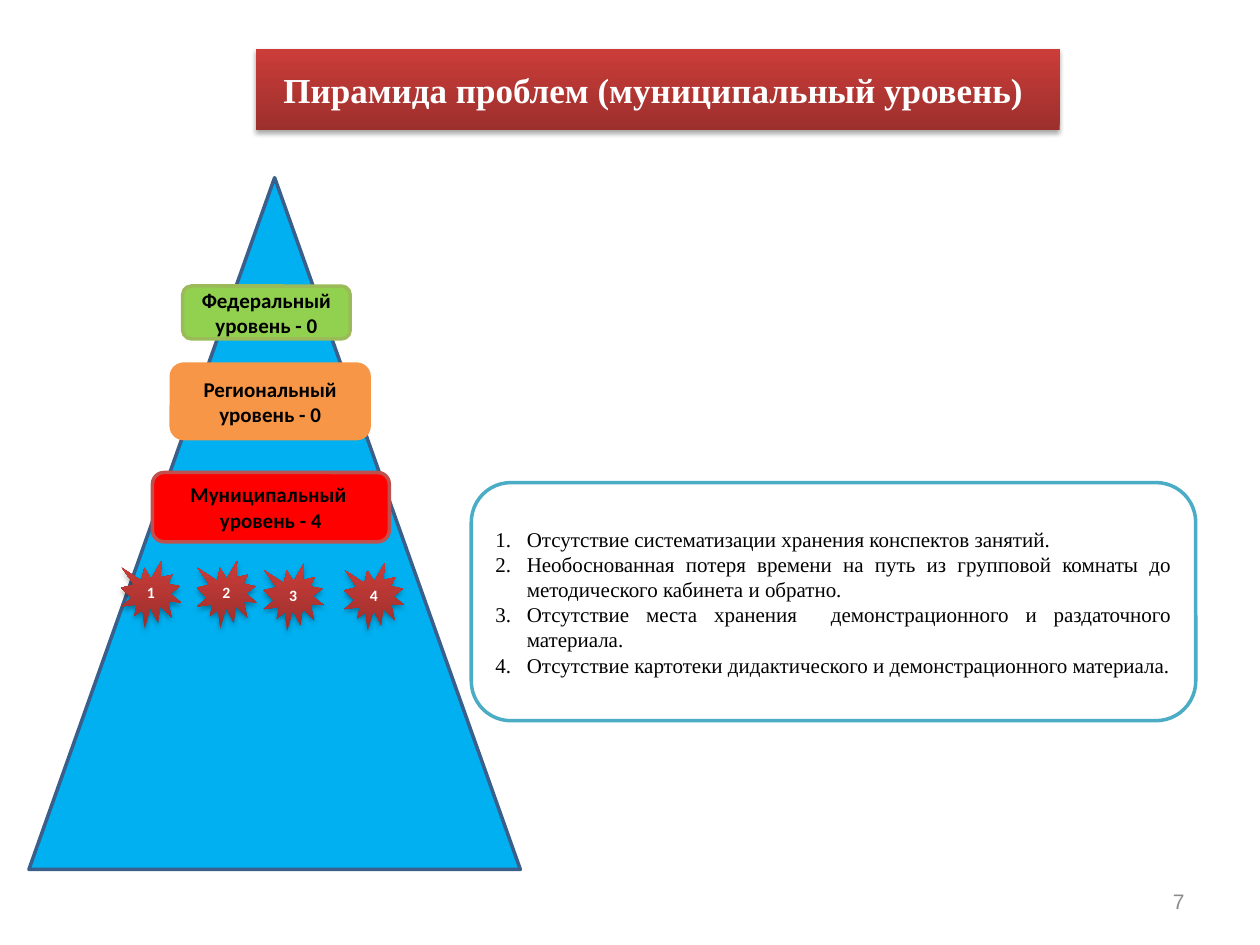
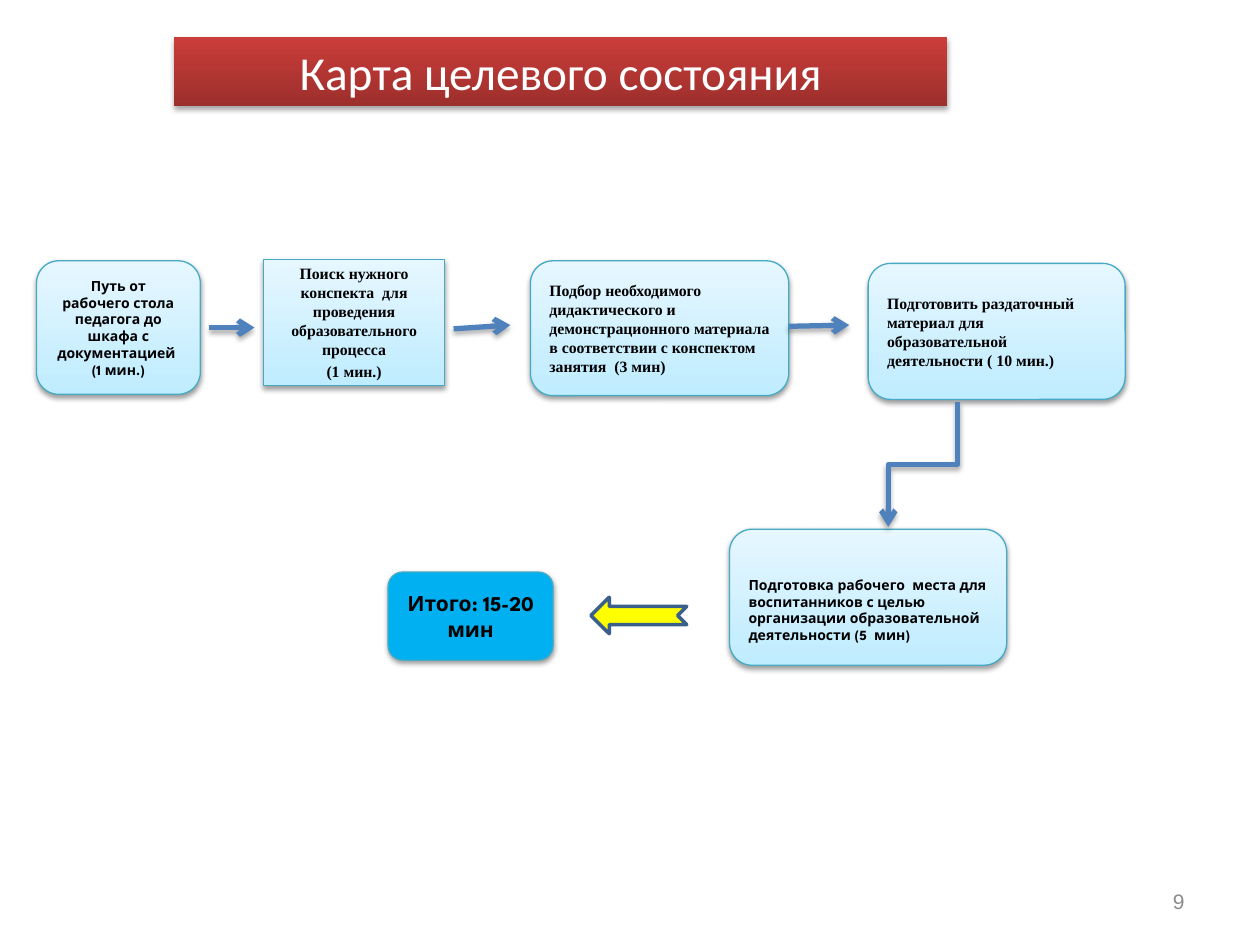
from dataclasses import dataclass
from typing import NamedTuple, Optional, Union

from lxml import etree
from pptx import Presentation
from pptx.dml.color import RGBColor
from pptx.enum.shapes import MSO_CONNECTOR as LINK, MSO_SHAPE as SHAPE
from pptx.enum.text import MSO_ANCHOR, PP_ALIGN as ALIGN
from pptx.oxml.ns import qn
from pptx.util import Inches, Pt


class Gradient(NamedTuple):
    bottom: str
    top: str


class Shadow(NamedTuple):
    opacity: int
    blur: float
    distance: float


class Font(NamedTuple):
    name: str
    size: float
    color: str = "000000"
    bold: bool = True


class Place(NamedTuple):
    x: float
    y: float
    w: float
    h: float


class Outline(NamedTuple):
    color: str
    width: float


@dataclass(frozen=True)
class Theme:
    red: Gradient = Gradient("9C2F2C", "CB3D39")
    ice: Gradient = Gradient("BFECFF", "E6F7FF")
    sky: str = "00B0F0"
    white: str = "FFFFFF"
    yellow: str = "FFFF00"
    navy_edge: Outline = Outline("3A5F8B", 2)
    teal_edge: Outline = Outline("4BACC6", 2)
    step_edge: Outline = Outline("46AAC4", 0.75)
    arrow: Outline = Outline("4F81BD", 3)
    strong_shadow: Shadow = Shadow(35, 3.1, 1.8)
    step_shadow: Shadow = Shadow(38, 3.1, 1.6)
    title_serif: Font = Font("Times New Roman", 20, "FFFFFF")
    title_sans: Font = Font("Calibri", 27, "FFFFFF", False)
    level: Font = Font("Calibri", 12)
    burst: Font = Font("Calibri", 9, "FFFFFF")
    problem: Font = Font("Times New Roman", 12, bold=False)
    step_serif: Font = Font("Times New Roman", 9)
    step_sans: Font = Font("League Spartan", 8)
    total: Font = Font("League Spartan", 12)
    page: Font = Font("Arial", 12, "8B8B8B", False)


T = Theme()


@dataclass(frozen=True)
class Box:
    at: Place
    lines: tuple[str, ...] = ()
    font: Font = T.level
    fill: Union[str, Gradient] = T.white
    edge: Optional[Outline] = None
    shadow: Optional[Shadow] = None
    kind: SHAPE = SHAPE.ROUNDED_RECTANGLE
    align: ALIGN = ALIGN.CENTER
    top_inset: float = 0.05
    space_before: float = 0
    numbered: bool = False
    rotation: int = 0


@dataclass(frozen=True)
class Step(Box):
    font: Font = T.step_serif
    fill: Union[str, Gradient] = T.ice
    edge: Optional[Outline] = T.step_edge
    shadow: Optional[Shadow] = T.step_shadow


LEVELS = (
    Box(Place(1.45, 2.27, 1.33, 0.42), ("Федеральный уровень - 0",),
        fill="92D050", edge=Outline("9BBB59", 2)),
    Box(Place(1.36, 2.89, 1.57, 0.59), ("Региональный уровень - 0",),
        fill="F79646", edge=Outline("F79646", 2)),
    Box(Place(1.21, 3.75, 1.88, 0.55), ("Муниципальный  уровень - 4",),
        fill="FF0000", edge=Outline("C0504D", 2)),
)

BURSTS = ((0.96, 4.45), (1.56, 4.45), (2.09, 4.47), (2.73, 4.47))

PROBLEMS = (
    "Отсутствие систематизации хранения конспектов занятий. ",
    "Необоснованная потеря времени на путь из групповой комнаты до "
    "методического кабинета и обратно.",
    "Отсутствие места хранения  демонстрационного и раздаточного материала.",
    "Отсутствие картотеки дидактического и демонстрационного материала.",
)

STEPS = (
    Step(Place(0.29, 2.07, 1.3, 1.06),
         ("Путь от рабочего стола педагога до шкафа с документацией ", "(1 мин.)"),
         font=T.step_sans),
    Step(Place(2.09, 2.06, 1.44, 1),
         ("Поиск нужного конспекта  для проведения образовательного процесса",
          "(1 мин.)"),
         kind=SHAPE.RECTANGLE, space_before=1.8),
    Step(Place(4.21, 2.07, 2.05, 1.07),
         ("Подбор необходимого дидактического и демонстрационного материала "
          "в соответствии с конспектом занятия  (3 мин)",),
         align=ALIGN.LEFT),
    Step(Place(6.89, 2.09, 2.04, 1.08),
         ("Подготовить раздаточный материал для образовательной деятельности "
          "( 10 мин.)",),
         align=ALIGN.LEFT),
    Step(Place(5.79, 4.2, 2.2, 1.08),
         ("Подготовка рабочего  места для воспитанников с целью организации "
          "образовательной деятельности (5  мин)",),
         font=T.step_sans, align=ALIGN.LEFT, top_inset=0.25),
    Step(Place(3.08, 4.54, 1.31, 0.7), ("Итого: 15-20 мин",),
         font=T.total, fill=T.sky),
)

STEP_ARROWS = ((1.66, 2.6, 2.02, 2.6), (3.6, 2.61, 4.05, 2.58), (6.26, 2.59, 6.74, 2.58))


def set_shadow(sp, shadow: Optional[Shadow]) -> None:
    """Replace the theme effects; call after the line is set."""
    props = sp._element.spPr
    effects = props.find(qn("a:effectLst"))
    if effects is None:
        effects = etree.SubElement(props, qn("a:effectLst"))
    if shadow:
        outer = etree.SubElement(
            effects, qn("a:outerShdw"), blurRad=str(Pt(shadow.blur)),
            dist=str(Pt(shadow.distance)), dir="5400000", rotWithShape="0")
        color = etree.SubElement(outer, qn("a:srgbClr"), val="000000")
        etree.SubElement(color, qn("a:alpha"), val=str(shadow.opacity * 1000))


def set_fill(sp, fill: Union[str, Gradient]) -> None:
    if isinstance(fill, Gradient):
        sp.fill.gradient()
        sp.fill.gradient_angle = 90
        for stop, color in zip(sp.fill.gradient_stops, fill):
            stop.color.rgb = RGBColor.from_string(color)
    else:
        sp.fill.solid()
        sp.fill.fore_color.rgb = RGBColor.from_string(fill)


def set_line(sp, edge: Optional[Outline]) -> None:
    if edge is None:
        sp.line.fill.background()
    else:
        sp.line.color.rgb = RGBColor.from_string(edge.color)
        sp.line.width = Pt(edge.width)


def number_paragraph(p) -> None:
    props = p._p.get_or_add_pPr()
    indent = Inches(0.25)
    props.set("marL", str(indent))
    props.set("indent", str(-indent))
    etree.SubElement(props, qn("a:buFont"), typeface="+mj-lt")
    etree.SubElement(props, qn("a:buAutoNum"), type="arabicPeriod")


def write(tf, lines: tuple[str, ...], font: Font, align: ALIGN,
          space_before: float = 0, numbered: bool = False) -> None:
    tf.word_wrap = True
    tf.vertical_anchor = MSO_ANCHOR.MIDDLE
    for i, line in enumerate(lines):
        p = tf.add_paragraph() if i else tf.paragraphs[0]
        p.alignment = align
        if i and space_before:
            p.space_before = Pt(space_before)
        if numbered:
            number_paragraph(p)
        r = p.add_run()
        r.text = line
        r.font.name = font.name
        r.font.size = Pt(font.size)
        r.font.bold = font.bold
        r.font.color.rgb = RGBColor.from_string(font.color)


def draw_box(s, box: Box) -> None:
    sp = s.shapes.add_shape(box.kind, *map(Inches, box.at))
    sp.rotation = box.rotation
    set_fill(sp, box.fill)
    set_line(sp, box.edge)
    sp.shadow.inherit = False
    set_shadow(sp, box.shadow)
    if box.lines:
        tf = sp.text_frame
        tf.margin_top = Inches(box.top_inset)
        write(tf, box.lines, box.font, box.align, box.space_before, box.numbered)


def draw_arrow(s, kind: LINK, ends: tuple[float, ...], quarter_turns: int = 0) -> None:
    c = s.shapes.add_connector(kind, *map(Inches, ends))
    set_line(c, T.arrow)
    props = c._element.spPr
    etree.SubElement(props.find(qn("a:ln")), qn("a:tailEnd"), type="arrow")
    if quarter_turns:
        props.find(qn("a:xfrm")).set("rot", str(quarter_turns * 5400000))
    set_shadow(c, T.strong_shadow)


def add_slide(prs, title: str, at: Place, font: Font, page: int):
    """Add a blank slide with its red title band and page number."""
    s = prs.slides.add_slide(prs.slide_layouts[6])
    draw_box(s, Box(at, (title,), font, T.red, shadow=T.strong_shadow,
                    kind=SHAPE.RECTANGLE))
    number = s.shapes.add_textbox(*map(Inches, Place(7.17, 6.95, 2.33, 0.4)))
    write(number.text_frame, (str(page),), T.page, ALIGN.RIGHT)
    return s


def build_pyramid(prs) -> None:
    s = add_slide(prs, "Пирамида проблем (муниципальный уровень) ",
                  Place(2.03, 0.39, 6.38, 0.64), T.title_serif, 7)
    draw_box(s, Box(Place(0.23, 1.41, 3.9, 5.49), fill=T.sky, edge=T.navy_edge,
                    kind=SHAPE.ISOSCELES_TRIANGLE))
    for level in LEVELS:
        draw_box(s, level)
    for i, (x, y) in enumerate(BURSTS, start=1):
        draw_box(s, Box(Place(x, y, 0.48, 0.54), (str(i),), T.burst, T.red,
                        shadow=T.strong_shadow, kind=SHAPE.EXPLOSION1))
    draw_box(s, Box(Place(3.74, 3.83, 5.75, 1.89), PROBLEMS, T.problem,
                    edge=T.teal_edge, align=ALIGN.JUSTIFY, numbered=True))


def build_target_map(prs) -> None:
    s = add_slide(prs, "Карта целевого состояния",
                  Place(1.38, 0.29, 6.14, 0.55), T.title_sans, 9)
    for step in STEPS:
        draw_box(s, step)
    draw_box(s, Box(Place(4.69, 4.74, 0.76, 0.29), fill=T.yellow, edge=T.navy_edge,
                    kind=SHAPE.NOTCHED_RIGHT_ARROW, rotation=180))
    for ends in STEP_ARROWS:
        draw_arrow(s, LINK.STRAIGHT, ends)
    draw_arrow(s, LINK.ELBOW, (6.83, 3.41, 7.82, 3.96), quarter_turns=1)


def main() -> None:
    prs = Presentation()
    prs.slide_width, prs.slide_height = Inches(10), Inches(7.5)
    build_pyramid(prs)
    build_target_map(prs)
    prs.save("out.pptx")


if __name__ == "__main__":
    main()
